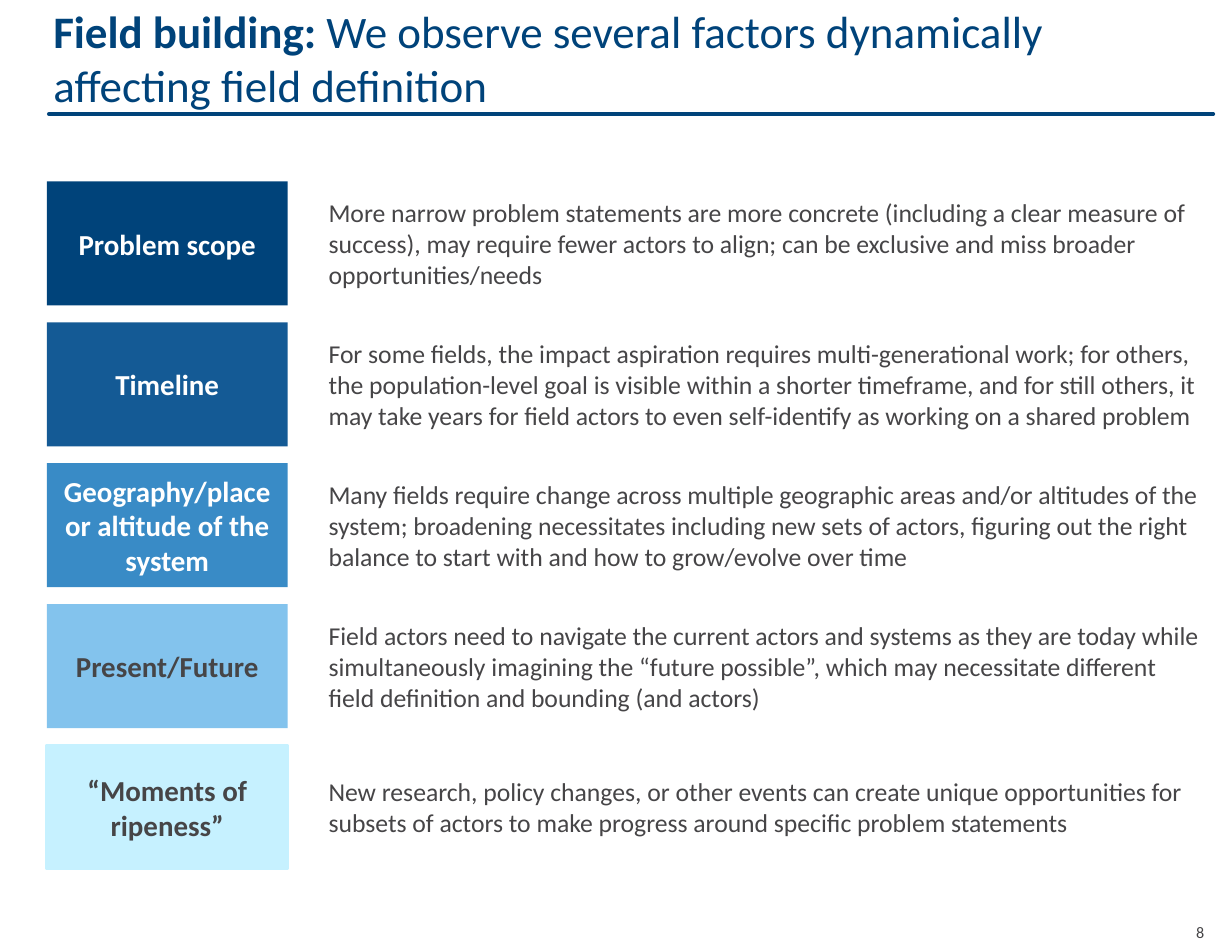
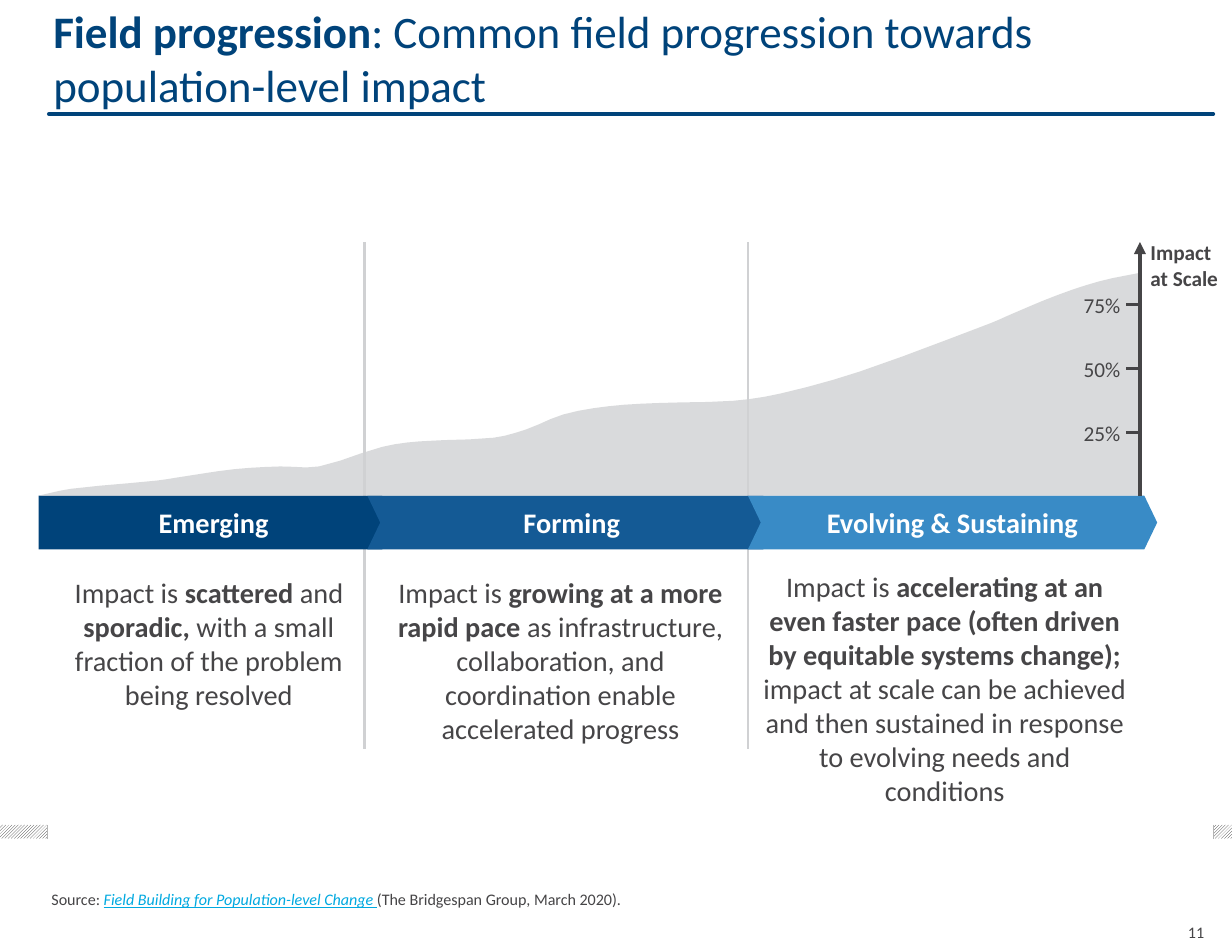
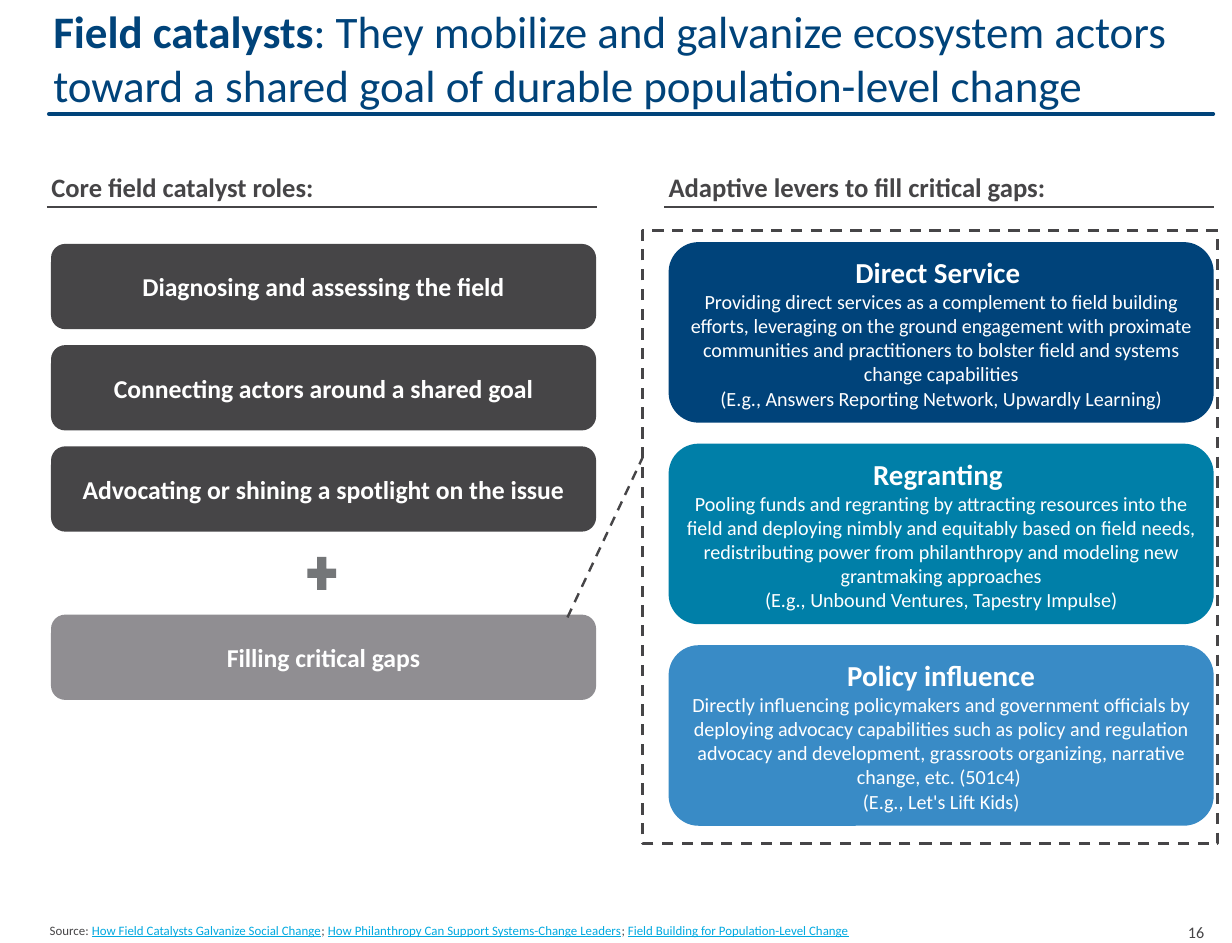
from pptx import Presentation
from pptx.dml.color import RGBColor
from pptx.enum.dml import MSO_LINE, MSO_PATTERN
from pptx.enum.shapes import MSO_CONNECTOR, MSO_SHAPE
from pptx.enum.text import MSO_ANCHOR, PP_ALIGN
from pptx.oxml.ns import qn
from pptx.util import Cm, Pt
from lxml.etree import SubElement

WIDTH, HEIGHT = 27.03, 20.68
FONT = "Calibri"
NAVY, BLUE, SKY, PALE, ICE = "00437A", "145A95", "398BC6", "83C3ED", "C6F1FF"
TEAL, LINK, WHITE = "007FA8", "00A9E0", "FFFFFF"
DARK, GREY, PLUS_GREY, LIGHT, HATCH, EDGE = "464547", "908E92", "747678", "D0D1D3", "333333", "B4B4B4"
LEFT, RIGHT = 1.07, 26.62
BOLD = {"bold": True}
LINKED = {"color": LINK, "underline": True}


def rgb(value):
    """Turn a hex string into a colour."""
    return RGBColor.from_string(value)


def write(shape, paragraphs, size=16, color=DARK, bold=False, align=PP_ALIGN.LEFT,
          anchor=MSO_ANCHOR.MIDDLE, insets=(0.1, 0.1, 0.1, 0.1), wrap=True):
    """Write paragraphs of runs; a run is a string or a (string, format) pair."""
    frame = shape.text_frame
    frame.word_wrap = wrap
    frame.vertical_anchor = anchor
    frame.margin_left, frame.margin_top, frame.margin_right, frame.margin_bottom = map(Cm, insets)
    for index, runs in enumerate(paragraphs):
        paragraph = frame.paragraphs[0] if index == 0 else frame.add_paragraph()
        paragraph.alignment = align
        for item in runs:
            text, changes = (item, {}) if isinstance(item, str) else item
            style = {"size": size, "color": color, "bold": bold, **changes}
            run = paragraph.add_run()
            run.text = text
            run.font.name = FONT
            run.font.size = Pt(style["size"])
            run.font.bold = style["bold"]
            run.font.italic = style.get("italic", False)
            run.font.underline = style.get("underline", False)
            run.font.color.rgb = rgb(style["color"])


def add_text(slide, box, paragraphs, **style):
    """Place a text box in box (left, top, width, height in cm)."""
    shape = slide.shapes.add_textbox(*map(Cm, box))
    write(shape, paragraphs, **style)
    return shape


def add_block(slide, kind, box, fill=None, line=None, weight=1.75, dash=None):
    """Place a flat preset shape."""
    shape = slide.shapes.add_shape(kind, *map(Cm, box))
    shape.shadow.inherit = False
    if fill:
        shape.fill.solid()
        shape.fill.fore_color.rgb = rgb(fill)
    else:
        shape.fill.background()
    if line:
        shape.line.color.rgb = rgb(line)
        shape.line.width = Pt(weight)
        shape.line.dash_style = dash
    else:
        shape.line.fill.background()
    return shape


def add_line(slide, start, end, color, weight=1.75, dash=None, arrow=False, rounded=False):
    """Draw a straight connector, with an optional arrowhead or round caps."""
    connector = slide.shapes.add_connector(MSO_CONNECTOR.STRAIGHT, *map(Cm, start + end))
    connector.line.color.rgb = rgb(color)
    connector.line.width = Pt(weight)
    connector.line.dash_style = dash
    properties = connector._element.spPr
    outline = properties.find(qn("a:ln"))
    if rounded:
        outline.set("cap", "rnd")
    if arrow:
        SubElement(outline, qn("a:tailEnd"), type="triangle")
    SubElement(properties, qn("a:effectLst"))


def add_slide(presentation, lead, rest, number):
    """Start a slide with the shared title, rule and page number."""
    slide = presentation.slides.add_slide(presentation.slide_layouts[6])
    page = add_block(slide, MSO_SHAPE.ROUNDED_RECTANGLE, (26.01, 20.22, 0.41, 0.43), WHITE)
    page.adjustments[0] = 0
    write(page, [[str(number)]], size=10, align=PP_ALIGN.RIGHT, insets=(0, 0, 0, 0), wrap=False)
    add_line(slide, (LEFT, 2.5), (RIGHT, 2.5), NAVY, 2.25, rounded=True)
    add_text(slide, (LEFT, 0, RIGHT - LEFT, 2.64), [[(lead, BOLD), rest]], size=28, color=NAVY,
             anchor=MSO_ANCHOR.BOTTOM, insets=(0.1, 0.1, 0.1, 0.2))
    return slide


def add_factor(slide, box, name, description, fill, color):
    """Place one factor: a label block and its description."""
    left, top, width, height = box
    label_width, gap = 5.28, 0.65
    label = add_block(slide, MSO_SHAPE.RECTANGLE, (left, top, label_width, height), fill,
                      ICE if fill == ICE else None)
    write(label, [[name]], size=18, color=color, bold=True, align=PP_ALIGN.CENTER)
    indent = label_width + gap
    add_text(slide, (left + indent, top, width - indent, height), [[description]],
             insets=(0.25, 0.13, 0.25, 0.13))


def build_factors(presentation):
    """Build the slide of factors that affect field definition."""
    slide = add_slide(presentation, "Field building: ",
                      "We observe several factors dynamically affecting field definition", 8)
    factors = [
        ("Problem scope", "More narrow problem statements are more concrete (including a clear measure of "
         "success), may require fewer actors to align; can be exclusive and miss broader "
         "opportunities/needs", NAVY, WHITE),
        ("Timeline", "For some fields, the impact aspiration requires multi-generational work; for others, "
         "the population-level goal is visible within a shorter timeframe, and for still others, it "
         "may take years for field actors to even self-identify as working on a shared problem", BLUE, WHITE),
        ("Geography/place or altitude of the system", "Many fields require change across multiple "
         "geographic areas and/or altitudes of the system; broadening necessitates including new sets "
         "of actors, figuring out the right balance to start with and how to grow/evolve over time",
         SKY, WHITE),
        ("Present/Future", "Field actors need to navigate the current actors and systems as they are today "
         "while simultaneously imagining the “future possible”, which may necessitate different "
         "field definition and bounding (and actors)", PALE, DARK),
        ("“Moments of ripeness”", "New research, policy changes, or other events can create unique "
         "opportunities for subsets of actors to make progress around specific problem statements",
         ICE, DARK),
    ]
    for index, factor in enumerate(factors):
        add_factor(slide, (1.03, 3.98 + 3.09 * index, 25.59, 2.72), *factor)


def smooth_curve(points, steps=3):
    """Return points along a smooth curve through the given points."""
    last = len(points) - 1
    slopes = []
    for index in range(last + 1):
        (x1, y1), (x2, y2) = points[max(index - 1, 0)], points[min(index + 1, last)]
        slopes.append((y2 - y1) / (x2 - x1))
    curve = [points[0]]
    for index in range(last):
        (x1, y1), (x2, y2) = points[index], points[index + 1]
        span = x2 - x1
        for step in range(1, steps + 1):
            t = step / steps
            rise = t * t * (3 - 2 * t)
            bend = slopes[index] * t * (1 - t) ** 2 - slopes[index + 1] * t * t * (1 - t)
            curve.append((x1 + span * t, y1 + (y2 - y1) * rise + span * bend))
    return curve


def add_impact_area(slide, left, base):
    """Draw the translucent impact curve upward from its base line."""
    heights = [(0, 0), (0.71, 0.15), (2.59, 0.33), (3.25, 0.43), (4.29, 0.58),
               (5.3, 0.64), (6.15, 0.64), (7.54, 1.07), (8.36, 1.19), (9.98, 1.27), (10.69, 1.45),
               (11.51, 1.78), (12.5, 1.96), (13.56, 2.03), (15.24, 2.08),
               (16.28, 2.24), (18.01, 2.72), (20.88, 3.78), (21.41, 4.01), (22.33, 4.39),
               (23.27, 4.7), (24.13, 4.88)]
    outline = [(Cm(left + x), Cm(base - y)) for x, y in smooth_curve(heights)]
    outline.append((outline[-1][0], Cm(base)))
    builder = slide.shapes.build_freeform(*outline[0])
    builder.add_line_segments(outline[1:], close=True)
    area = builder.convert_to_shape()
    area.shadow.inherit = False
    area.fill.solid()
    area.fill.fore_color.rgb = rgb(LIGHT)
    color = area._element.spPr.find(qn("a:solidFill"))[0]
    SubElement(color, qn("a:alpha"), val="79000")
    area.line.fill.background()


def add_impact_axis(slide, left, top, base):
    """Draw the impact axis with its ticks and labels."""
    add_line(slide, (left, base), (left, top), DARK, 2.5, arrow=True)
    add_text(slide, (left + 0.15, top - 0.13, 1.96, 1.27), [["Impact at Scale"]],
             size=13.2, bold=True, insets=(0.08,) * 4)
    for index, label in enumerate(("75%", "50%", "25%")):
        height = top + 1.37 + 1.4 * index
        add_line(slide, (left - 0.3, height), (left - 0.05, height), DARK)
        add_text(slide, (left - 1.45, height - 0.34, 1.1, 0.7), [[label]], size=13.2,
                 align=PP_ALIGN.RIGHT, insets=(0.08,) * 4)


def add_hatch(slide, left, width, edge):
    """Place a hatched marker with a thin line on its inner edge."""
    top, height = 18.09, 0.3
    marker = add_block(slide, MSO_SHAPE.RECTANGLE, (left, top, width, height))
    marker.fill.patterned()
    marker.fill.pattern = MSO_PATTERN.LIGHT_UPWARD_DIAGONAL
    marker.fill.fore_color.rgb = rgb(HATCH)
    marker.fill.back_color.rgb = rgb(WHITE)
    add_line(slide, (edge, top), (edge, top + height), EDGE, 0.25)


def add_stage(slide, kind, box, name, fill, text_box, runs):
    """Place one stage arrow and the text under it."""
    arrow = add_block(slide, kind, box, fill)
    arrow.adjustments[0] = 0.24
    write(arrow, [[name]], size=17.6, color=WHITE, bold=True, align=PP_ALIGN.CENTER,
          insets=(0.08,) * 4)
    add_text(slide, text_box, [runs], size=17.6, align=PP_ALIGN.CENTER, anchor=MSO_ANCHOR.TOP,
             insets=(0.25, 0.13, 0.25, 0.13))


def build_progression(presentation):
    """Build the slide of field progression stages."""
    slide = add_slide(presentation, "Field progression",
                      ": Common field progression towards population-level impact", 11)
    base, top, height = 10.87, 5.31, 1.18
    add_hatch(slide, 0, 1.04, 1.04)
    add_hatch(slide, RIGHT, WIDTH - RIGHT, RIGHT)
    for divider in (7.99, 16.41):
        add_line(slide, (divider, top), (divider, 16.43), LIGHT)
    stages = [
        (MSO_SHAPE.PENTAGON, (0.85, base, 7.82, height), "Emerging", NAVY, (1.04, 12.49, 7.09, 3.28),
         ["Impact is ", ("scattered ", BOLD), "and ", ("sporadic, ", BOLD),
          "with a small fraction of the problem being resolved"]),
        (MSO_SHAPE.CHEVRON, (8.06, base, 8.97, height), "Forming", BLUE, (8.2, 12.49, 8.2, 4.04),
         ["Impact is ", ("growing at a more rapid pace ", BOLD),
          "as infrastructure, collaboration, and coordination enable accelerated progress"]),
        (MSO_SHAPE.CHEVRON, (16.41, base, 8.98, height), "Evolving & Sustaining", SKY,
         (16.45, 12.36, 8.56, 5.54),
         ["Impact is ",
          ("accelerating at an even faster pace (often driven by equitable systems change); ", BOLD),
          "impact at scale can be achieved and then sustained in response to evolving needs "
          "and conditions"]),
    ]
    for stage in stages:
        add_stage(slide, *stage)
    add_impact_area(slide, 0.85, base)
    add_impact_axis(slide, 25.01, top, base)
    add_text(slide, (1.13, 19.51, 18.82, 0.43),
             [["Source: ", ("Field Building for Population-level Change ", {**LINKED, "italic": True}),
               "(The Bridgespan Group, March 2020)."]], size=10, insets=(0, 0, 0, 0))


def add_heading(slide, left, text, size):
    """Place an underlined column heading."""
    top, width, height = 3.62, 12.06, 0.92
    add_text(slide, (left, top, width, height), [[text]], size=size, bold=True, anchor=MSO_ANCHOR.BOTTOM)
    add_line(slide, (left, top + height), (left + width, top + height), DARK)


def add_card(slide, box, fill, paragraphs, size):
    """Place a rounded card with centred white text."""
    card = add_block(slide, MSO_SHAPE.ROUNDED_RECTANGLE, box, fill)
    write(card, paragraphs, size=size, color=WHITE, align=PP_ALIGN.CENTER)


def add_roles(slide, left, top):
    """Place the column of core roles."""
    width, height = 11.96, 1.87
    roles = [
        ("Diagnosing and assessing the field", 0, DARK),
        ("Connecting actors around a shared goal", 2.22, DARK),
        ("Advocating or shining a spotlight on the issue", 4.44, DARK),
        ("Filling critical gaps", 8.13, GREY),
    ]
    for name, offset, fill in roles:
        add_card(slide, (left, top + offset, width, height), fill, [[(name, BOLD)]], 16)
    add_block(slide, MSO_SHAPE.MATH_PLUS, (left + 5.51, top + 6.73, 0.86, 0.99), PLUS_GREY)


def add_levers(slide, left, top):
    """Place the adaptive levers inside their dashed frame."""
    levers = [
        ("Direct Service ", NAVY, "Providing direct services as a complement to field building efforts, "
         "leveraging on the ground engagement with proximate communities and practitioners to bolster "
         "field and systems change capabilities",
         "(E.g., Answers Reporting Network, Upwardly Learning)"),
        ("Regranting ", TEAL, "Pooling funds and regranting by attracting resources into the field and "
         "deploying nimbly and equitably based on field needs, redistributing power from philanthropy "
         "and modeling new grantmaking approaches", "(E.g., Unbound Ventures, Tapestry Impulse)"),
        ("Policy influence", SKY, "Directly influencing policymakers and government officials by "
         "deploying advocacy capabilities such as policy and regulation advocacy and development, "
         "grassroots organizing, narrative change, etc. (501c4) ", "(E.g., Let's Lift Kids)"),
    ]
    for index, (name, fill, description, example) in enumerate(levers):
        add_card(slide, (left + 0.57, top + 0.25 + 4.42 * index, 11.96, 3.96), fill,
                 [[(name, {"size": 18, "bold": True})], [description], [example]], 12.5)
    add_block(slide, MSO_SHAPE.RECTANGLE, (left, top, 12.62, 13.44), line=DARK, dash=MSO_LINE.DASH)


def build_catalysts(presentation):
    """Build the slide of field catalyst roles and levers."""
    slide = add_slide(presentation, "Field catalysts",
                      ": They mobilize and galvanize ecosystem actors toward a shared goal of "
                      "durable population-level change", 16)
    add_heading(slide, 1.03, "Core field catalyst roles:", 16.5)
    add_heading(slide, 14.57, "Adaptive levers to fill critical gaps:", 16.6)
    add_roles(slide, 1.12, 5.35)
    add_levers(slide, 14.1, 5.06)
    add_line(slide, (12.45, 13.54), (14.1, 10.03), DARK, 1.5, MSO_LINE.DASH)
    add_text(slide, (1.01, 20.15, 18.03, 0.48),
             [["Source: ", ("How Field Catalysts Galvanize Social Change", LINKED), "; ",
               ("How Philanthropy Can Support Systems-Change Leaders", LINKED), "; ",
               ("Field Building for Population-Level Change", LINKED)]],
             size=8, anchor=MSO_ANCHOR.TOP, insets=(0.08,) * 4, wrap=False)


def main():
    """Build and save the presentation."""
    presentation = Presentation()
    presentation.slide_width, presentation.slide_height = Cm(WIDTH), Cm(HEIGHT)
    build_factors(presentation)
    build_progression(presentation)
    build_catalysts(presentation)
    presentation.save("out.pptx")


if __name__ == "__main__":
    main()
